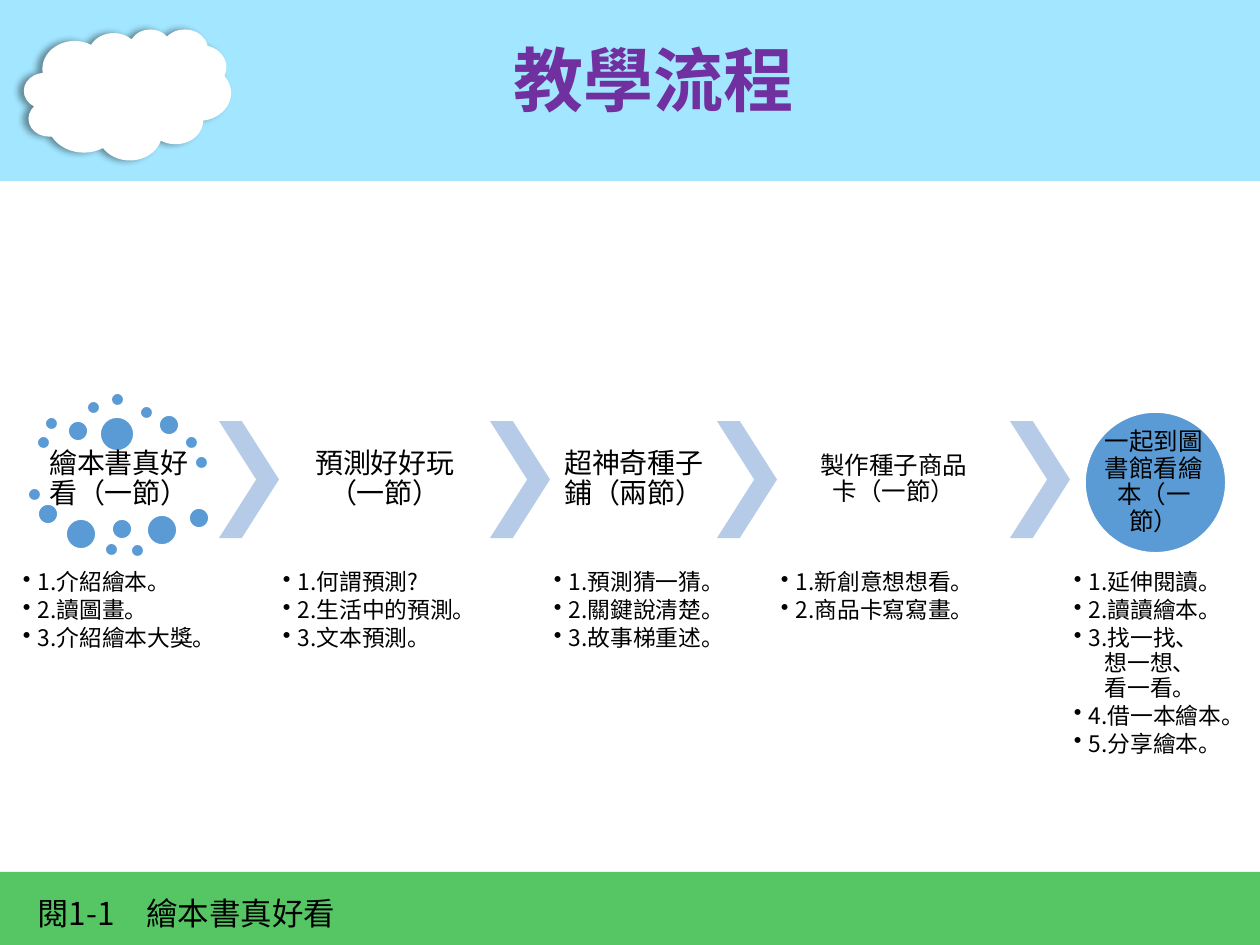
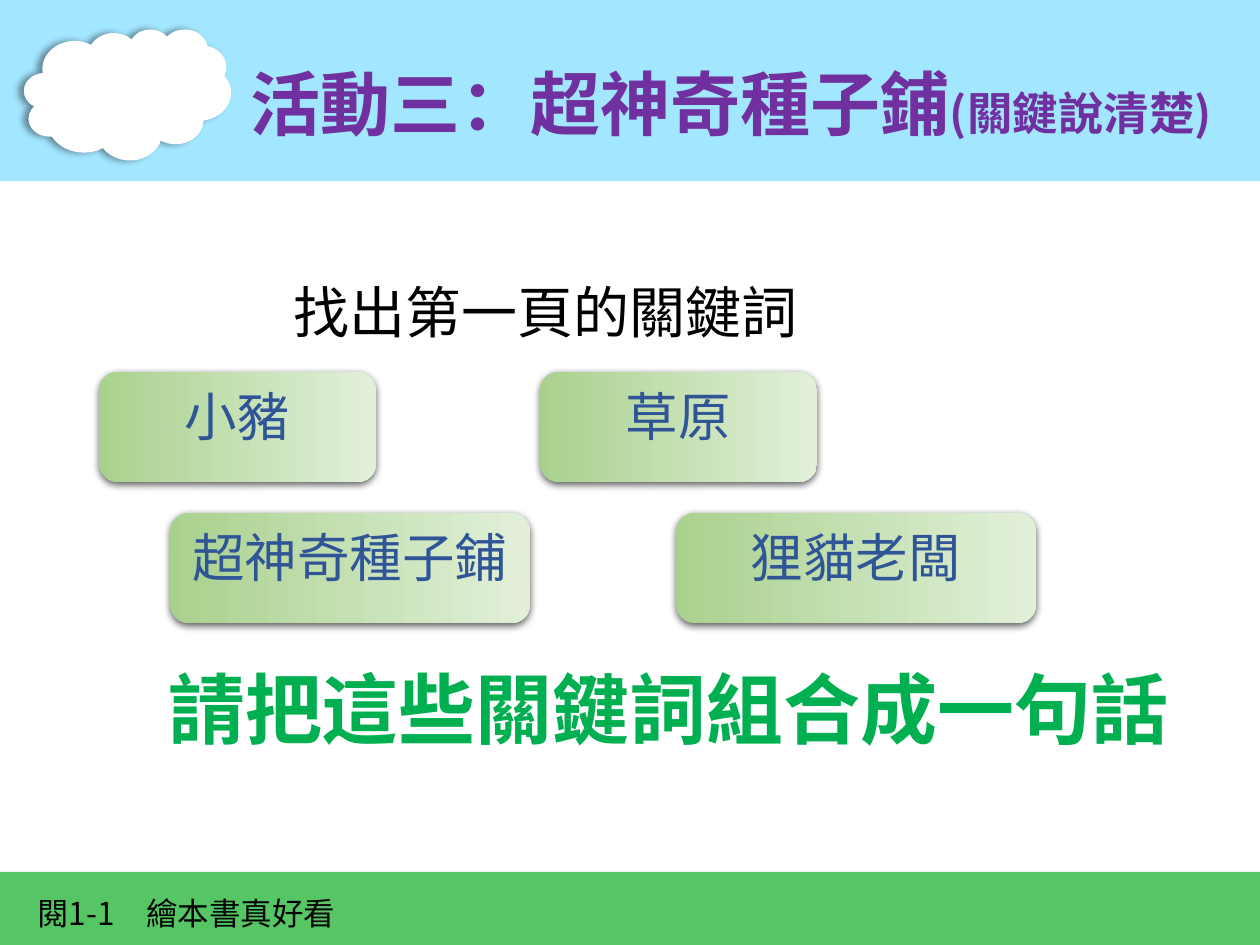
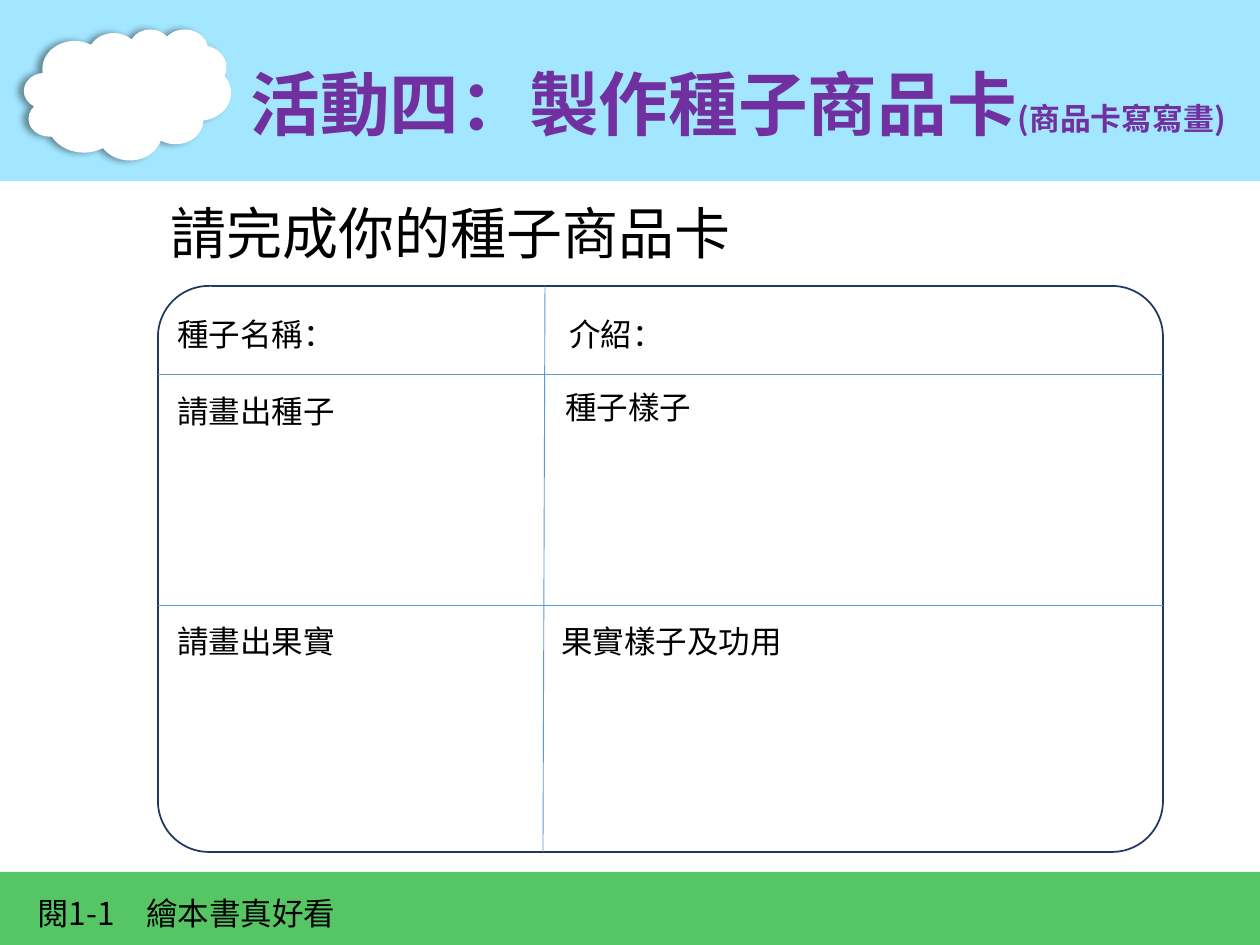
from lxml import etree
from pptx import Presentation
from pptx import util as u
from pptx.dml.color import RGBColor
from pptx.enum import shapes, text
from pptx.oxml.ns import qn

PX_PER_INCH = 126
FONT = "Noto Sans CJK SC"
BLACK, WHITE = "000000", "FFFFFF"
SKY, GRASS, PURPLE = "A3E6FF", "56C664", "7030A0"
BLUE, PALE_BLUE, NAVY, KEYWORD_BLUE = "5B9BD5", "B5CBE7", "203864", "2F5597"
LEAF, PALE_LEAF, GREEN, GREEN_EDGE = "A9D18E", "E2F0D9", "00B050", "C5E0B4"
SHAPE, ALIGN, ANCHOR = shapes.MSO_SHAPE, text.PP_ALIGN, text.MSO_ANCHOR

# Column width, heading, heading size and tasks of each lesson step
STEPS = [
    (199, "繪本書真好看（一節）", 16, ["1.介紹繪本。", "2.讀圖畫。", "3.介紹繪本大獎。"]),
    (210, "預測好好玩（一節）", 16, ["1.何謂預測?", "2.生活中的預測。", "3.文本預測。"]),
    (166, "超神奇種子鋪（兩節）", 16, ["1.預測猜一猜。", "2.關鍵說清楚。", "3.故事梯重述。"]),
    (232, "製作種子商品卡（一節）", 14, ["1.新創意想想看。", "2.商品卡寫寫畫。"]),
    (166, "一起到圖書館看繪本（一節）", 14,
     ["1.延伸閱讀。", "2.讀讀繪本。", "3.找一找、\n想一想、\n看一看。",
      "4.借一本繪本。", "5.分享繪本。"]),
]
STEP_GAP = 61

# Left, top and diameter of the dots around the first step
DOTS = [
    (37, 436, 13), (45, 417, 13), (68, 421, 20), (87, 401, 13), (111, 393, 13),
    (140, 406, 13), (159, 415, 20), (185, 436, 13), (195, 456, 13), (100, 417, 34),
    (28, 488, 13), (38, 504, 20), (66, 519, 30), (105, 543, 13), (112, 519, 20),
    (131, 544, 13), (147, 515, 30), (189, 508, 20),
]

KEYWORDS = [("小豬", 99, 372, 277), ("草原", 540, 372, 277),
            ("超神奇種子鋪", 170, 513, 360), ("狸貓老闆", 676, 513, 360)]

CARD_LABELS = [("種子名稱：", 165, 309, 184), ("介紹：", 557, 309, 121),
               ("請畫出種子", 165, 386, 184), ("種子樣子", 553, 382, 152),
               ("請畫出果實", 165, 616, 184), ("果實樣子及功用", 549, 616, 248)]


def px(length):
    return u.Emu(round(length * 914400 / PX_PER_INCH))


def rgb(color):
    return RGBColor.from_string(color)


def sub(parent, tag, **attributes):
    return etree.SubElement(parent, qn(tag), attributes)


def set_font(paragraph, size, color=BLACK, bold=False, name=FONT):
    font = paragraph.font
    font.size, font.bold, font.name = u.Pt(size), bold, name
    font.color.rgb = rgb(color)
    sub(font._rPr, "a:ea", typeface=FONT)


def add_shadow(shape, alpha, blur, distance, degrees):
    effects = sub(shape.element.spPr, "a:effectLst")
    shadow = sub(effects, "a:outerShdw", blurRad=str(u.Pt(blur)), dist=str(u.Pt(distance)),
                 dir=str(degrees * 60000), algn="ctr", rotWithShape="0")
    sub(sub(shadow, "a:srgbClr", val=BLACK), "a:alpha", val=str(alpha * 1000))


def add_shape(slide, kind, box, fill=None, line=None, has_shadow=False):
    shape = slide.shapes.add_shape(kind, *map(px, box))
    if not has_shadow:
        shape.shadow.inherit = False
    if fill:
        shape.fill.solid()
        shape.fill.fore_color.rgb = rgb(fill)
    else:
        shape.fill.background()
    if line:
        shape.line.color.rgb = rgb(line)
        shape.line.width = u.Pt(1)
    else:
        shape.line.fill.background()
    return shape


def add_frame(slide, box, inset=None, anchor=ANCHOR.TOP, wrap=True):
    frame = slide.shapes.add_textbox(*map(px, box)).text_frame
    frame.word_wrap, frame.vertical_anchor = wrap, anchor
    if inset is not None:
        frame.margin_left = frame.margin_right = px(inset)
        frame.margin_top = frame.margin_bottom = px(inset)
    return frame


def add_text(slide, box, words, size, color=BLACK, bold=False, name=FONT,
             align=ALIGN.LEFT, spacing=1.0, **frame_options):
    paragraph = add_frame(slide, box, **frame_options).paragraphs[0]
    paragraph.text, paragraph.alignment = words, align
    paragraph.line_spacing = spacing
    set_font(paragraph, size, color, bold, name)
    return paragraph


def add_list(slide, box, items):
    frame = add_frame(slide, box, inset=3)
    paragraph = frame.paragraphs[0]
    for item in items:
        lines = item.split("\n")
        for number, line in enumerate(lines):
            if paragraph is None:
                paragraph = frame.add_paragraph()
            paragraph.text = line
            paragraph.line_spacing = 0.9
            paragraph.space_after = u.Pt(2 if line is lines[-1] else 0)
            properties = paragraph._p.get_or_add_pPr()
            properties.set("marL", str(px(31 if number else 15)))
            properties.set("indent", str(0 if number else -px(15)))
            if number == 0:
                sub(properties, "a:buChar", char="•")
            set_font(paragraph, 13)
            paragraph = None


def add_line(slide, start, end):
    line = slide.shapes.add_connector(shapes.MSO_CONNECTOR.STRAIGHT,
                                      *map(px, start + end))
    line.line.color.rgb = rgb(BLUE)
    line.line.width = u.Pt(0.5)
    sub(line.element.spPr, "a:effectLst")


def set_title(slide, box, words, size=40, note="", note_size=None):
    title = slide.shapes.title
    title.left, title.top, title.width, title.height = map(px, box)
    frame = title.text_frame
    frame.word_wrap, frame.auto_size = True, text.MSO_AUTO_SIZE.NONE
    frame.vertical_anchor = ANCHOR.MIDDLE
    paragraph = frame.paragraphs[0]
    paragraph.alignment, paragraph.line_spacing = ALIGN.LEFT, 0.9
    paragraph.add_run().text = words
    set_font(paragraph, size, PURPLE, bold=True)
    if note:
        run = paragraph.add_run()
        run.text, run.font.size = note, u.Pt(note_size)


def decorate_layout(layout, slide):
    """Build the shared bands, cloud and footer and move them to the layout."""
    for placeholder in list(layout.placeholders)[1:]:
        layout.shapes.element.remove(placeholder.element)
    add_shape(slide, SHAPE.RECTANGLE, (0, 0, 1260, 181), SKY)
    cloud = add_shape(slide, SHAPE.CLOUD, (24, 29, 207, 131), WHITE, has_shadow=True)
    add_shadow(cloud, 40, 4, 3, 180)
    add_shape(slide, SHAPE.RECTANGLE, (0, 872, 1260, 73), GRASS)
    add_text(slide, (25, 888, 692, 50), "閱1-1　繪本書真好看", 18)
    for part in list(slide.shapes)[1:]:
        layout.shapes.element.append(part.element)


def build_process(slide):
    set_title(slide, (501, 28, 631, 111), "教學流程")
    for left, top, diameter in DOTS:
        add_shape(slide, SHAPE.OVAL, (left, top, diameter, diameter), BLUE, WHITE)
    add_shape(slide, SHAPE.OVAL, (1085, 412, 141, 141), BLUE, WHITE)

    left = 20
    for number, (width, heading, size, tasks) in enumerate(STEPS, 1):
        is_last = number == len(STEPS)
        heading_width = 100 if is_last else 166
        heading_left = left + (width - heading_width) // 2
        add_text(slide, (heading_left, 424 if is_last else 421, heading_width, 117),
                 heading, size, align=ALIGN.CENTER, spacing=0.9,
                 inset=0 if is_last else 3, anchor=ANCHOR.MIDDLE)
        add_list(slide, (left, 568, width, 102), tasks)
        if not is_last:
            chevron = add_shape(slide, SHAPE.CHEVRON, (left + width, 421, 60, 117), PALE_BLUE)
            chevron.adjustments[0] = 0.62
        left += width + STEP_GAP


def add_keyword(slide, word, left, top, width):
    card = add_shape(slide, SHAPE.ROUNDED_RECTANGLE, (left, top, width, 110),
                     has_shadow=True)
    card.fill.gradient()
    card.fill.gradient_angle = 0
    for stop, color in zip(card.fill.gradient_stops, (LEAF, PALE_LEAF)):
        stop.color.rgb = rgb(color)
    add_shadow(card, 63, 4.5, 1.5, 90)
    frame = card.text_frame
    frame.vertical_anchor = ANCHOR.TOP
    paragraph = frame.paragraphs[0]
    paragraph.text, paragraph.alignment = word, ALIGN.CENTER
    set_font(paragraph, 30, KEYWORD_BLUE)


def build_keywords(slide):
    set_title(slide, (238, 52, 998, 111), "活動三：超神奇種子鋪",
              note="(關鍵說清楚)", note_size=26)
    add_text(slide, (281, 271, 575, 81), "找出第一頁的關鍵詞", 32)
    for keyword in KEYWORDS:
        add_keyword(slide, *keyword)
    task = add_text(slide, (151, 655, 1036, 106), "請把這些關鍵詞組合成一句話", 44,
                    GREEN, bold=True, align=ALIGN.CENTER, wrap=False)
    # Pale edge around the letters
    edge = etree.Element(qn("a:ln"), w=str(u.Pt(1)))
    sub(sub(edge, "a:solidFill"), "a:srgbClr", val=GREEN_EDGE)
    task.font._rPr.insert(0, edge)


def build_seed_card(slide):
    set_title(slide, (238, 52, 1008, 111), "活動四：製作種子商品卡", 39.8,
              "(商品卡寫寫畫)", 17.6)
    add_text(slide, (158, 192, 900, 81), "請完成你的種子商品卡", 32)
    left, top, width, height = 158, 286, 1005, 566
    card = add_shape(slide, SHAPE.ROUNDED_RECTANGLE, (left, top, width, height), line=NAVY)
    card.adjustments[0] = 0.09
    for row_top in (374, 605):
        add_line(slide, (left, row_top), (left + width, row_top))
    add_line(slide, (545, top), (543, top + height))
    for label, label_left, label_top, label_width in CARD_LABELS:
        add_text(slide, (label_left, label_top, label_width, 50), label, 18,
                 name="Calibri", wrap=False)


def main():
    deck = Presentation()
    deck.slide_width, deck.slide_height = px(1260), px(945)
    layout = deck.slide_layouts.get_by_name("Title Only")
    for number, build in enumerate((build_process, build_keywords, build_seed_card)):
        slide = deck.slides.add_slide(layout)
        if number == 0:
            decorate_layout(layout, slide)
        build(slide)
    deck.save("out.pptx")


if __name__ == "__main__":
    main()
